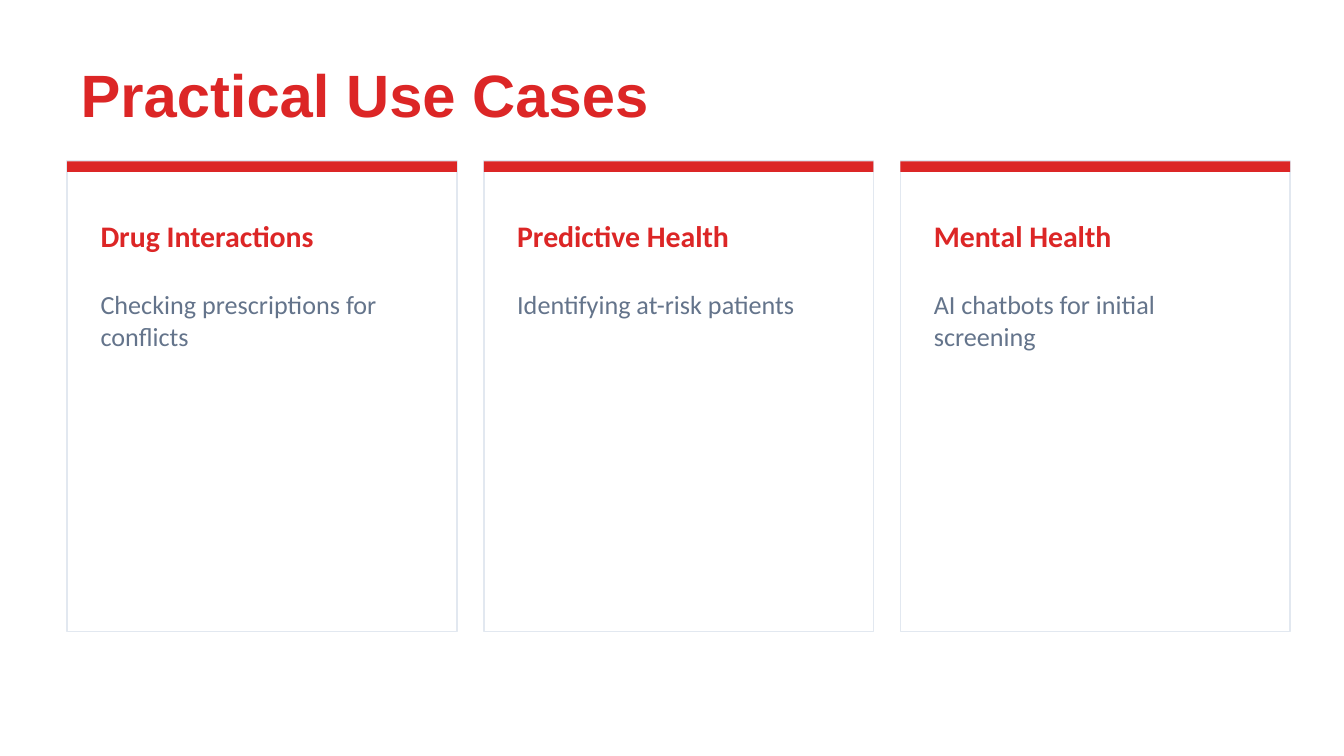
"""Build the slide of practical use cases as a row of three cards."""
import dataclasses

import pptx
import pptx.dml.color
import pptx.enum.shapes
import pptx.enum.text
import pptx.util

Inches = pptx.util.Inches
Anchor = pptx.enum.text.MSO_ANCHOR


@dataclasses.dataclass(frozen=True)
class Theme:
    accent: str = "DC2626"
    surface: str = "FFFFFF"
    border: str = "E2E8F0"
    muted: str = "64748B"
    title_font: str = "Arial"
    body_font: str = "Calibri"
    title_size: int = 32
    heading_size: int = 16
    body_size: int = 14


THEME = Theme()
CARD_LEFT, CARD_TOP, CARD_WIDTH, CARD_HEIGHT = 0.5, 1.2, 2.9, 3.5
CARD_GAP, CARD_PADDING, BAR_HEIGHT = 0.2, 0.15, 0.08
USE_CASES = [
    ("Drug Interactions", "Checking prescriptions for conflicts"),
    ("Predictive Health", "Identifying at-risk patients"),
    ("Mental Health", "AI chatbots for initial screening"),
]


def color(value):
    return pptx.dml.color.RGBColor.from_string(value)


def write_text(box, text, font, size, ink, bold=False, anchor=Anchor.MIDDLE):
    frame = box.text_frame
    frame.text = text
    frame.word_wrap = True
    frame.auto_size = pptx.enum.text.MSO_AUTO_SIZE.NONE
    frame.vertical_anchor = anchor
    para = frame.paragraphs[0]
    para.alignment = pptx.enum.text.PP_ALIGN.LEFT
    for span in para.runs:
        span.font.name = font
        span.font.size = pptx.util.Pt(size)
        span.font.bold = bold
        span.font.color.rgb = color(ink)


def add_title(page, text):
    title = page.shapes.title
    title.left, title.top = Inches(0.5), Inches(0.4)
    title.width, title.height = Inches(9), Inches(0.6)
    write_text(title, text, THEME.title_font, THEME.title_size, THEME.accent, bold=True)


def add_panel(page, left, height, fill, border=None):
    panel = page.shapes.add_shape(
        pptx.enum.shapes.MSO_SHAPE.RECTANGLE,
        Inches(left), Inches(CARD_TOP), Inches(CARD_WIDTH), Inches(height))
    panel.shadow.inherit = False
    panel.fill.solid()
    panel.fill.fore_color.rgb = color(fill)
    if border:
        panel.line.color.rgb = color(border)
        panel.line.width = pptx.util.Pt(1)
    else:
        panel.line.fill.background()


def add_card_text(page, left, top, height, text, size, ink, **style):
    box = page.shapes.add_textbox(
        Inches(left + CARD_PADDING), Inches(top),
        Inches(CARD_WIDTH - 2 * CARD_PADDING), Inches(height))
    write_text(box, text, THEME.body_font, size, ink, **style)


def add_card(page, left, heading, description):
    add_panel(page, left, CARD_HEIGHT, THEME.surface, THEME.border)
    add_panel(page, left, BAR_HEIGHT, THEME.accent)
    add_card_text(page, left, 1.5, 0.5, heading,
                  THEME.heading_size, THEME.accent, bold=True)
    add_card_text(page, left, 2.1, 2.4, description,
                  THEME.body_size, THEME.muted, anchor=Anchor.TOP)


def main():
    deck = pptx.Presentation()
    deck.slide_width = Inches(10)
    deck.slide_height = deck.slide_width * 9 // 16
    page = deck.slides.add_slide(deck.slide_layouts.get_by_name("Title Only"))
    page.background.fill.solid()
    page.background.fill.fore_color.rgb = color(THEME.surface)
    add_title(page, "Practical Use Cases")
    for index, (heading, description) in enumerate(USE_CASES):
        left = CARD_LEFT + index * (CARD_WIDTH + CARD_GAP)
        add_card(page, left, heading, description)
    deck.save("out.pptx")


if __name__ == "__main__":
    main()
